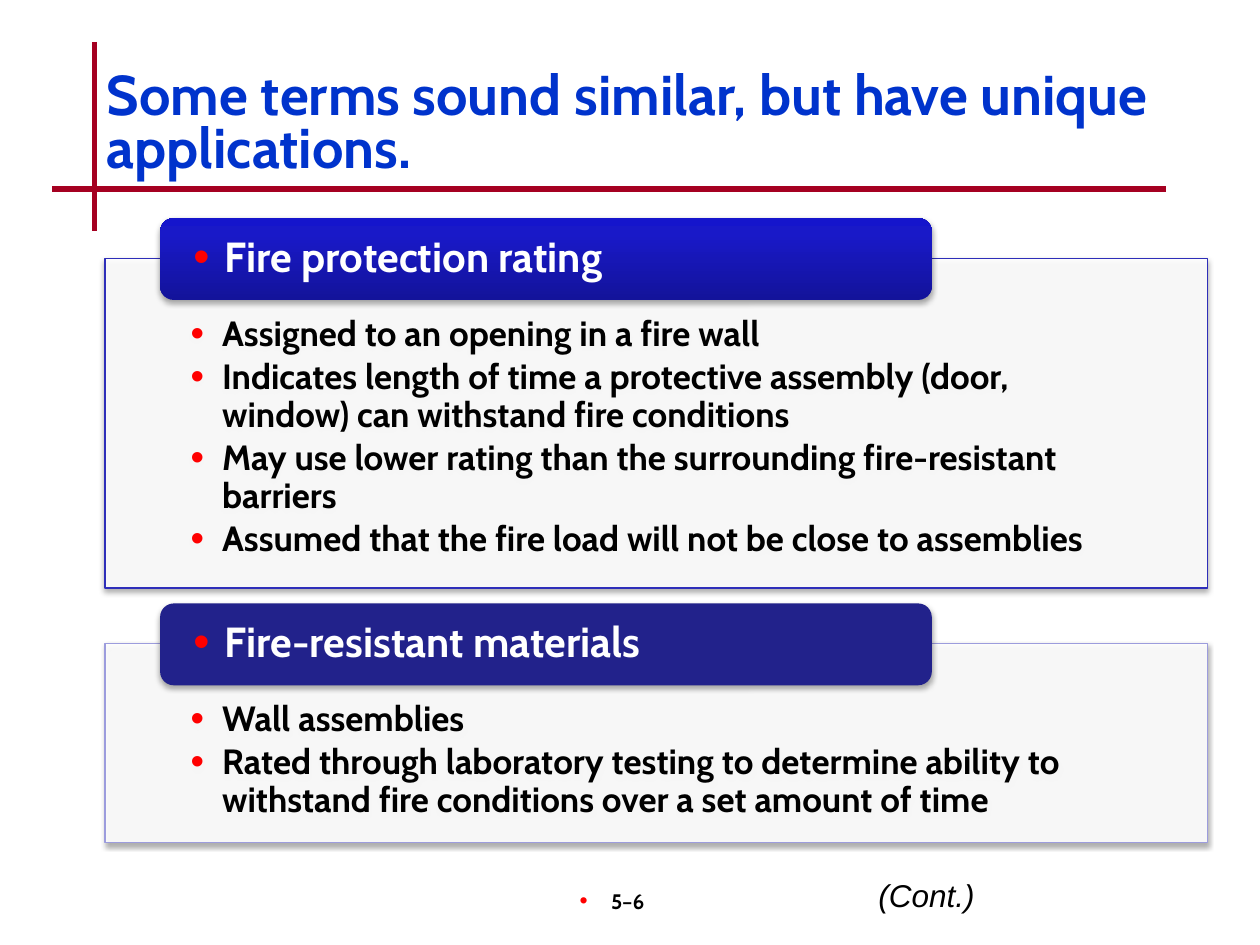
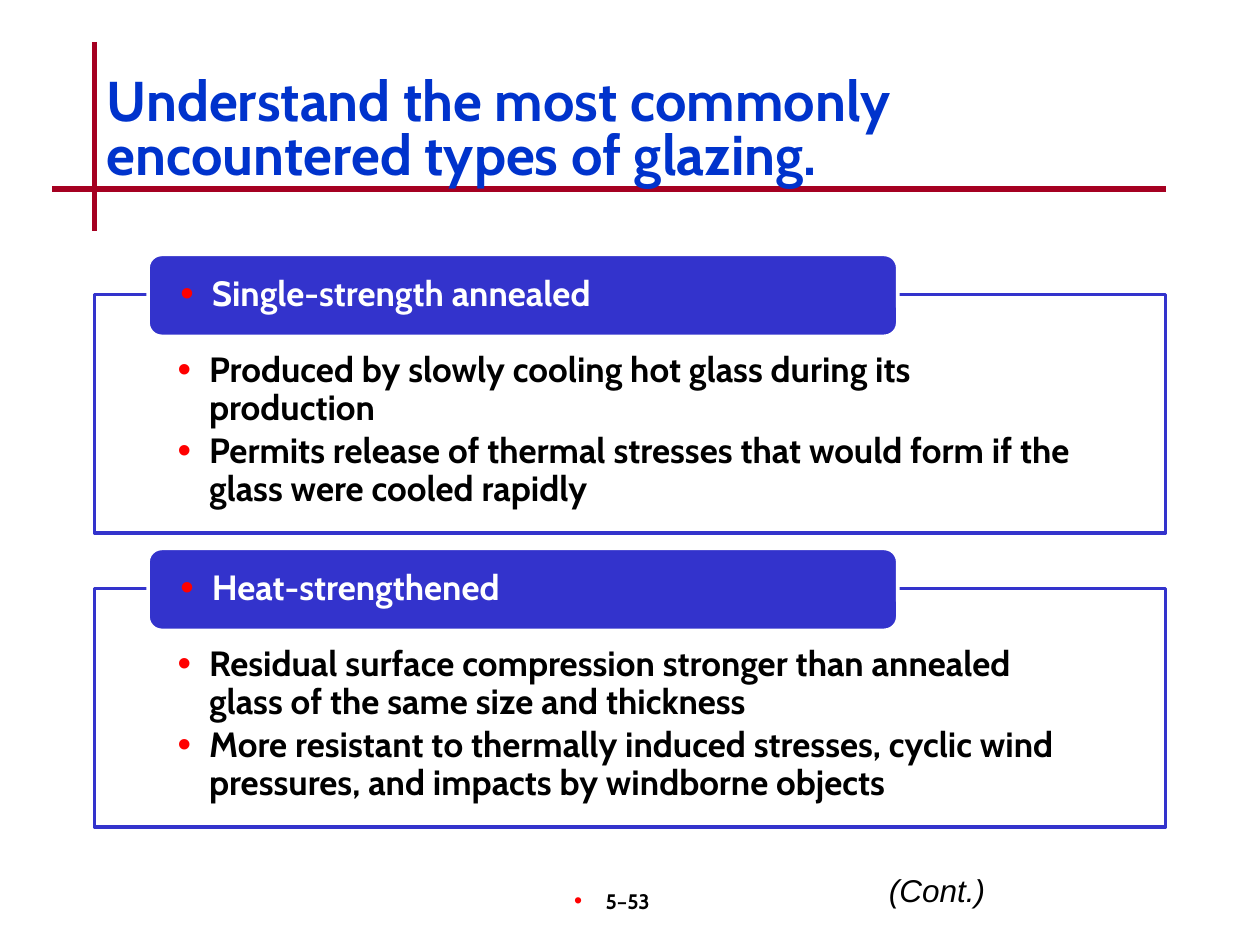
from lxml import etree
from pptx import Presentation
from pptx.dml.color import RGBColor
from pptx.enum.shapes import MSO_CONNECTOR, MSO_SHAPE
from pptx.enum.text import MSO_ANCHOR, PP_ALIGN
from pptx.oxml.ns import qn
from pptx.util import Pt

RECTANGLE = MSO_SHAPE.RECTANGLE
ROUNDED = MSO_SHAPE.ROUNDED_RECTANGLE
STRAIGHT = MSO_CONNECTOR.STRAIGHT
TOP, MIDDLE = MSO_ANCHOR.TOP, MSO_ANCHOR.MIDDLE
LEFT, CENTER, RIGHT = PP_ALIGN.LEFT, PP_ALIGN.CENTER, PP_ALIGN.RIGHT

COLORS = {
    "rule": "A50021",
    "title": "0033CC",
    "bullet": "FF0000",
    "text": "000000",
    "white": "FFFFFF",
    "blue": "3333CC",
    "navy": "22228B",
    "edge": "2E2EB9",
    "pale_edge": "9C9CDD",
}
HEADER_GRADIENT = [(0, "13139A"), (80, "1919C8"), (100, "1515CC")]
FONT = "Cabin"
BULLET_INDENT = 18
HEADER_HEIGHT = 46.8
HEADER_RISE = 23


def rgb(name):
    return RGBColor.from_string(COLORS[name])


def add_element(parent, tag, **attributes):
    element = etree.SubElement(parent, qn(tag))
    for name, value in attributes.items():
        element.set(name, str(value))
    return element


def add_bullet(paragraph):
    properties = paragraph._p.get_or_add_pPr()
    properties.set("marL", str(Pt(BULLET_INDENT)))
    properties.set("indent", str(-Pt(BULLET_INDENT)))
    color = add_element(properties, "a:buClr")
    add_element(color, "a:srgbClr", val=COLORS["bullet"])
    add_element(properties, "a:buSzPct", val=110000)
    add_element(properties, "a:buFont", typeface="Arial")
    add_element(properties, "a:buChar", char="•")


def write_text(shape, lines, size, color="text", font=FONT, bold=True, italic=False,
               align=LEFT, anchor=TOP, margins=(7.2, 3.6, 7.2, 3.6),
               bullet=False, spacing=1.0, space_after=0):
    frame = shape.text_frame
    frame.word_wrap = True
    frame.vertical_anchor = anchor
    left, top, right, bottom = margins
    frame.margin_left, frame.margin_top = Pt(left), Pt(top)
    frame.margin_right, frame.margin_bottom = Pt(right), Pt(bottom)
    for index, line in enumerate(lines):
        paragraph = frame.add_paragraph() if index else frame.paragraphs[0]
        if bullet:
            add_bullet(paragraph)
        paragraph.alignment = align
        paragraph.line_spacing = spacing
        paragraph.space_after = Pt(space_after)
        run = paragraph.add_run()
        run.text = line
        run.font.name = font
        run.font.size = Pt(size)
        run.font.bold = bold
        run.font.italic = italic
        run.font.color.rgb = rgb(color)


def add_text(slide, left, top, width, height, text, size, **style):
    box = slide.shapes.add_textbox(Pt(left), Pt(top), Pt(width), Pt(height))
    write_text(box, [text], size, **style)


def add_rule(slide, x1, y1, x2, y2):
    rule = slide.shapes.add_connector(STRAIGHT, Pt(x1), Pt(y1), Pt(x2), Pt(y2))
    rule.line.color.rgb = rgb("rule")
    rule.line.width = Pt(3)
    add_element(rule._element.spPr, "a:effectLst")


def add_shadow(shape):
    effects = shape._element.spPr.find(qn("a:effectLst"))
    shadow = add_element(effects, "a:outerShdw", blurRad=Pt(3.1), dist=Pt(1.8),
                         dir=5400000, rotWithShape=0)
    color = add_element(shadow, "a:srgbClr", val="000000")
    add_element(color, "a:alpha", val=35000)


def fill_gradient(shape, stops):
    shape.fill.gradient()
    shape.fill.gradient_angle = 90
    stop_list = shape._element.spPr.find(".//" + qn("a:gsLst"))
    for stop in list(stop_list):
        stop_list.remove(stop)
    for position, color in stops:
        stop = add_element(stop_list, "a:gs", pos=position * 1000)
        add_element(stop, "a:srgbClr", val=color)


def add_block(slide, kind, left, top, width, height, fill, line, line_width, shadow):
    shape = slide.shapes.add_shape(kind, Pt(left), Pt(top), Pt(width), Pt(height))
    shape.shadow.inherit = False
    if fill == "gradient":
        fill_gradient(shape, HEADER_GRADIENT)
    else:
        shape.fill.solid()
        shape.fill.fore_color.rgb = rgb(fill)
    if line:
        shape.line.color.rgb = rgb(line)
        shape.line.width = Pt(line_width)
    else:
        shape.line.fill.background()
    if shadow:
        add_shadow(shape)
    return shape


def add_panel(slide, left, top, width, height, heading, points, heading_size,
              header_fill, edge, edge_width, header_edge=None, shadow=False):
    body = add_block(slide, RECTANGLE, left, top, width, height,
                     "white", edge, edge_width, shadow)
    body_color = body._element.spPr.find(qn("a:solidFill"))[0]
    add_element(body_color, "a:alpha", val=90000)
    side = round(width * 0.0776, 2)
    write_text(body, points, 20, margins=(side, 33.1, side, 11.5),
               bullet=True, spacing=0.9, space_after=3)
    header = add_block(slide, ROUNDED, left + width * 0.05, top - HEADER_RISE,
                       width * 0.7, HEADER_HEIGHT, header_fill, header_edge,
                       edge_width, shadow)
    side = round(width * 0.0265, 2)
    write_text(header, [heading], heading_size, color="white", anchor=MIDDLE,
               margins=(side, 0, side, 0), bullet=True, spacing=0.9)


def add_base(presentation, title, title_top, number, cont_left, cont_top):
    slide = presentation.slides.add_slide(presentation.slide_layouts[6])
    add_rule(slide, 54, 24, 54, 132)
    add_rule(slide, 30, 108, 666, 108)
    add_text(slide, 282, 504, 150, 36, number, 12, align=CENTER, bullet=True,
             margins=(7.2, 3.6, 21.6, 3.6))
    add_text(slide, 54, title_top, 612, 72, title, 32, color="title",
             anchor=MIDDLE, spacing=0.8)
    add_text(slide, cont_left, cont_top, 120, 29, "(Cont.)", 18, font="Arial",
             bold=False, italic=True, align=RIGHT)
    return slide


def build_terms(presentation):
    slide = add_base(presentation, "Some terms sound similar, but have unique applications.",
                     36, "5–6", 444, 497)
    add_panel(slide, 60, 147.6, 630, 188.4, "Fire protection rating", [
        "Assigned to an opening in a fire wall",
        "Indicates length of time a protective assembly (door, window) "
        "can withstand fire conditions",
        "May use lower rating than the surrounding fire-resistant barriers",
        "Assumed that the fire load will not be close to assemblies",
    ], 24, "gradient", "edge", 0.75, shadow=True)
    add_panel(slide, 60, 367.8, 630, 113.8, "Fire-resistant materials", [
        "Wall assemblies",
        "Rated through laboratory testing to determine ability to "
        "withstand fire conditions over a set amount of time",
    ], 24, "navy", "pale_edge", 0.75, shadow=True)


def build_glazing(presentation):
    slide = add_base(presentation, "Understand the most commonly encountered types of glazing.",
                     39.6, "5–53", 450, 494)
    panels = [
        ("Single-strength annealed", [
            "Produced by slowly cooling hot glass during its production",
            "Permits release of thermal stresses that would form if the "
            "glass were cooled rapidly",
        ]),
        ("Heat-strengthened", [
            "Residual surface compression stronger than annealed glass "
            "of the same size and thickness",
            "More resistant to thermally induced stresses, cyclic wind "
            "pressures, and impacts by windborne objects",
        ]),
    ]
    for index, (heading, points) in enumerate(panels):
        add_panel(slide, 54, 168.4 + index * 168, 612, 136.2, heading, points, 20,
                  "blue", "blue", 2, header_edge="white")


def main():
    presentation = Presentation()
    presentation.slide_width = Pt(720)
    presentation.slide_height = Pt(540)
    build_terms(presentation)
    build_glazing(presentation)
    presentation.save("out.pptx")


if __name__ == "__main__":
    main()
